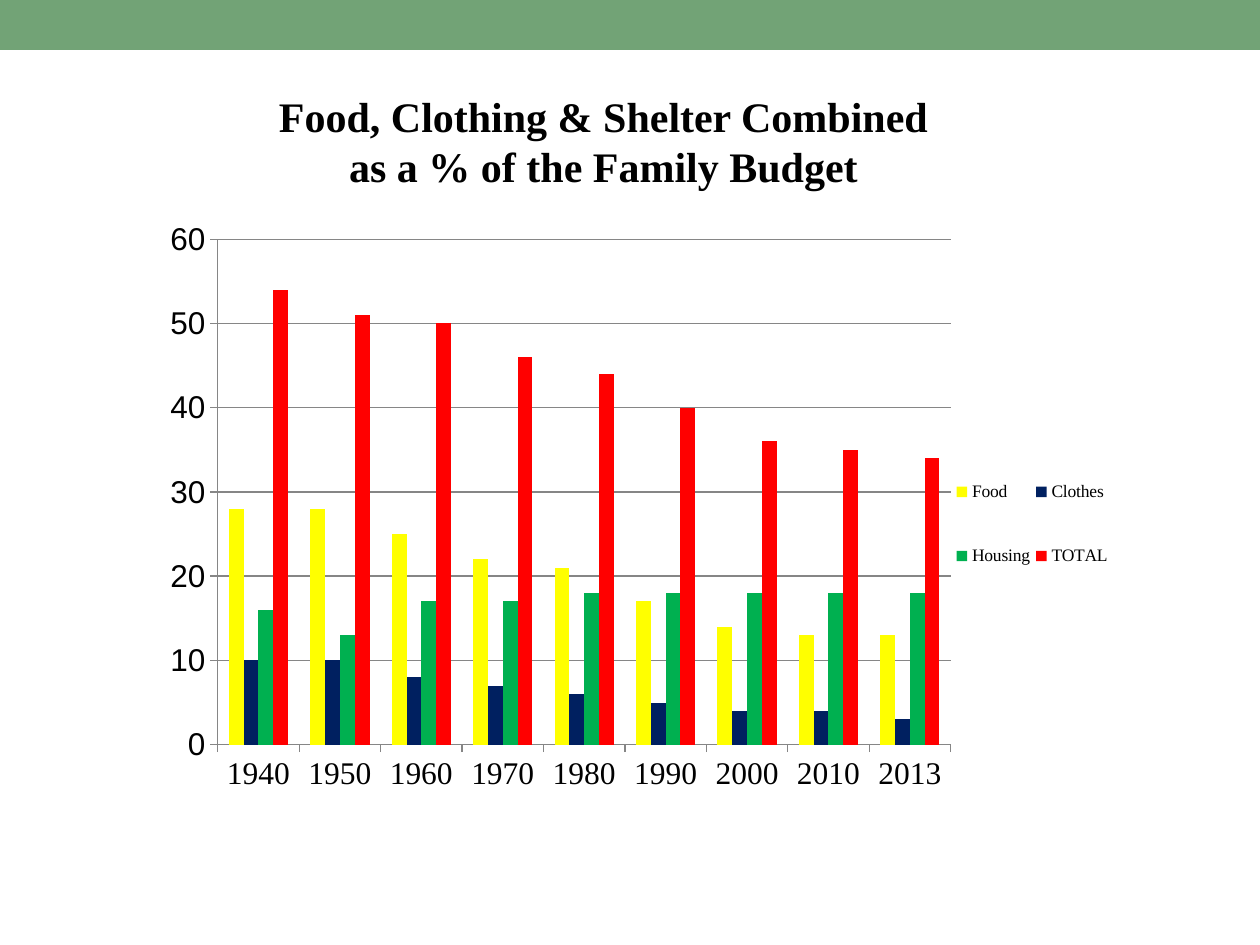
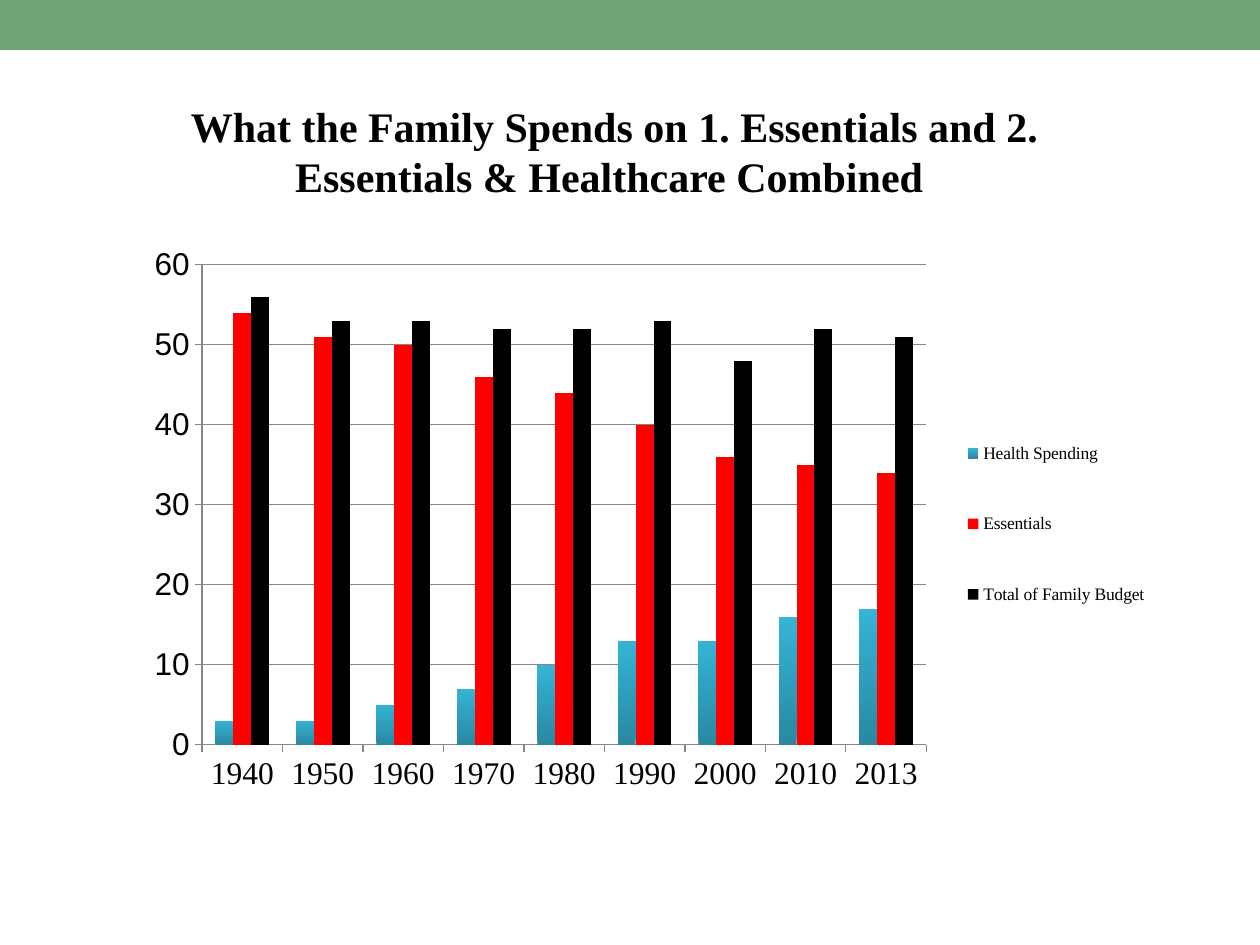
from pptx import Presentation
from pptx.chart.data import CategoryChartData
from pptx.dml.color import RGBColor
from pptx.enum import chart as charts, shapes, text
from pptx.oxml import parse_xml
from pptx.oxml.ns import nsdecls, qn
from pptx.util import Emu, Pt

PX = 914400 / 126
PAGE_WIDTH, PAGE_HEIGHT = 1260, 945

BAND_GREEN = RGBColor(0x72, 0xA3, 0x76)
BLACK = RGBColor(0, 0, 0)
AXIS_GREY = RGBColor(0x86, 0x86, 0x86)
YELLOW = RGBColor(0xFF, 0xFF, 0)
NAVY = RGBColor(0, 0x20, 0x60)
GREEN = RGBColor(0, 0xB0, 0x50)
RED = RGBColor(0xFF, 0, 0)
TEAL_DARK = RGBColor(0x2A, 0x88, 0xA2)
TEAL_LIGHT = RGBColor(0x34, 0xB4, 0xD6)

SERIF, SANS = "Times New Roman", "Arial"
YEARS = ["1940", "1950", "1960", "1970", "1980", "1990", "2000", "2010", "2013"]
ESSENTIALS = [54, 51, 50, 46, 44, 40, 36, 35, 34]

SLIDES = [
    {
        "title": "Food, Clothing & Shelter Combined as a % of the Family Budget",
        "title_box": (262, 84, 683, 115),
        "chart_box": (116, 220, 1018, 640),
        "plot": (0.1, 0.03, 0.72, 0.79),
        "legend": (0.82, 0.34, 0.16, 0.27),
        "series": [
            ("Food", [28, 28, 25, 22, 21, 17, 14, 13, 13], YELLOW),
            ("Clothes", [10, 10, 8, 7, 6, 5, 4, 4, 3], NAVY),
            ("Housing", [16, 13, 17, 17, 18, 18, 18, 18, 18], GREEN),
            ("TOTAL", ESSENTIALS, RED),
        ],
    },
    {
        "title": "What the Family Spends on 1. Essentials and 2. Essentials & Healthcare Combined ",
        "title_box": (147, 94, 935, 115),
        "chart_box": (94, 220, 1081, 640),
        "plot": (0.1, 0.07, 0.67, 0.75),
        "legend": (0.79, 0.27, 0.2, 0.41),
        "series": [
            ("Health Spending", [3, 3, 5, 7, 10, 13, 13, 16, 17], (TEAL_DARK, TEAL_LIGHT)),
            ("Essentials", ESSENTIALS, RED),
            ("Total of Family Budget", [56, 53, 53, 52, 52, 53, 48, 52, 51], BLACK),
        ],
    },
]


def px(*lengths):
    return [Emu(round(length * PX)) for length in lengths]


def style_font(font, name, size, bold=False):
    font.name, font.size, font.bold = name, Pt(size), bold
    font.color.rgb = BLACK


def add_band(page):
    band = page.shapes.add_shape(shapes.MSO_SHAPE.RECTANGLE, *px(0, 0, PAGE_WIDTH, 50))
    band.shadow.inherit = False
    band.fill.solid()
    band.fill.fore_color.rgb = BAND_GREEN
    band.line.fill.background()


def add_title(page, box, wording):
    frame = page.shapes.add_textbox(*px(*box)).text_frame
    frame.word_wrap = True
    frame.auto_size = text.MSO_AUTO_SIZE.SHAPE_TO_FIT_TEXT
    para = frame.paragraphs[0]
    para.text = wording
    para.alignment = text.PP_ALIGN.CENTER
    style_font(para.font, SERIF, 24, bold=True)


def set_layout(element, position, bounds, inner=False):
    for old in element.findall(qn("c:layout")):
        element.remove(old)
    target = '<c:layoutTarget val="inner"/>' if inner else ""
    modes = '<c:xMode val="edge"/><c:yMode val="edge"/>'
    sizes = "".join(f'<c:{key} val="{value}"/>' for key, value in zip("xywh", bounds))
    element.insert(position, parse_xml(
        f'<c:layout {nsdecls("c")}><c:manualLayout>{target}{modes}{sizes}'
        "</c:manualLayout></c:layout>"))


def paint_series(series, colour):
    fill = series.format.fill
    if isinstance(colour, RGBColor):
        fill.solid()
        fill.fore_color.rgb = colour
    else:
        fill.gradient()
        fill.gradient_angle = 90
        for stop, position, shade in zip(fill.gradient_stops, (0, 1), colour):
            stop.position = position
            stop.color.rgb = shade
    series.invert_if_negative = False


def style_axis(axis, font_name):
    axis.major_tick_mark = charts.XL_TICK_MARK.OUTSIDE
    axis.minor_tick_mark = charts.XL_TICK_MARK.NONE
    axis.format.line.color.rgb = AXIS_GREY
    axis.format.line.width = Pt(0.75)
    style_font(axis.tick_labels.font, font_name, 18)


def add_budget_chart(page, box, series_list, plot_bounds, legend_bounds):
    data = CategoryChartData()
    data.categories = YEARS
    for name, values, _ in series_list:
        data.add_series(name, values)
    chart = page.shapes.add_chart(
        charts.XL_CHART_TYPE.COLUMN_CLUSTERED, *px(*box), data).chart
    style_font(chart.font, SANS, 10)
    chart.has_title = False

    plot = chart.plots[0]
    plot.gap_width, plot.overlap, plot.vary_by_categories = 150, 0, False
    for series, (_, _, colour) in zip(plot.series, series_list):
        paint_series(series, colour)

    style_axis(chart.category_axis, SERIF)
    scale = chart.value_axis
    style_axis(scale, SANS)
    scale.minimum_scale, scale.maximum_scale, scale.major_unit = 0, 60, 10
    scale.has_major_gridlines = True
    scale.major_gridlines.format.line.color.rgb = AXIS_GREY
    scale.major_gridlines.format.line.width = Pt(0.75)

    chart.has_legend = True
    legend = chart.legend
    legend.position = charts.XL_LEGEND_POSITION.RIGHT
    legend.include_in_layout = False
    style_font(legend.font, SERIF, 10)
    set_layout(legend._element, 1, legend_bounds)
    set_layout(chart._chartSpace.chart.plotArea, 0, plot_bounds, inner=True)


def add_chart_page(deck, content):
    page = deck.slides.add_slide(deck.slide_layouts[6])
    add_band(page)
    add_budget_chart(page, content["chart_box"], content["series"],
                     content["plot"], content["legend"])
    add_title(page, content["title_box"], content["title"])


def main():
    deck = Presentation()
    deck.slide_width, deck.slide_height = px(PAGE_WIDTH, PAGE_HEIGHT)
    for content in SLIDES:
        add_chart_page(deck, content)
    deck.save("out.pptx")


if __name__ == "__main__":
    main()
